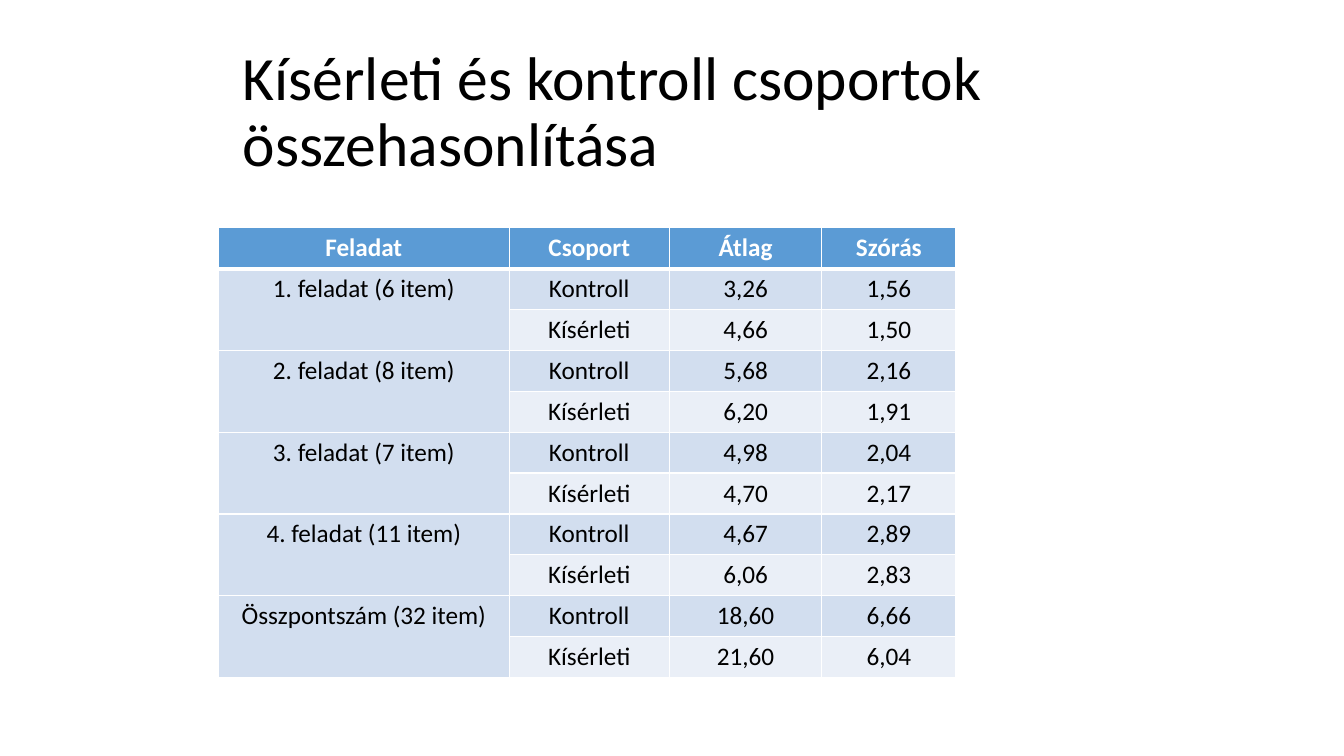
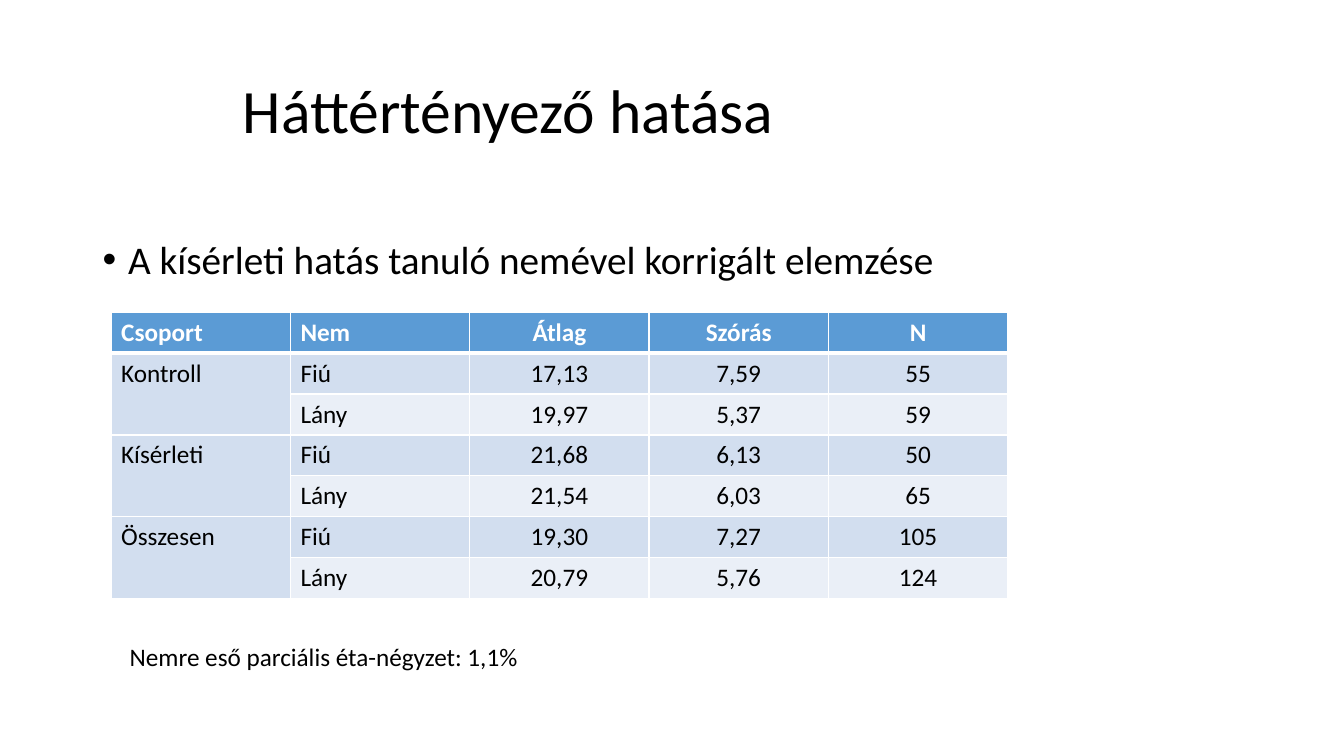
"""Build two slides that compare test results in tables."""
import pptx
import pptx.dml.color
import pptx.enum.text
import pptx.oxml
import pptx.oxml.ns
import pptx.util

Cm = pptx.util.Cm
Pt = pptx.util.Pt
RGB = pptx.dml.color.RGBColor
ALIGN = pptx.enum.text.PP_ALIGN
ANCHOR = pptx.enum.text.MSO_ANCHOR

BLACK = RGB(0x00, 0x00, 0x00)
WHITE = RGB(0xFF, 0xFF, 0xFF)
BLUE = RGB(0x5B, 0x9B, 0xD5)
BANDS = RGB(0xD2, 0xDE, 0xEF), RGB(0xEA, 0xEF, 0xF7)
FONT = "Calibri"
ROW = 1.03
TITLE = 5.87, 1.02, 22.56, 3.68

TASKS = {
    "spot": (5.51, 5.74),
    "cols": (7.32, 4.04, 3.84, 3.38),
    "left": 0,
    "head": ("Feladat", "Csoport", "Átlag", "Szórás"),
    "pair": ("Kontroll", "Kísérleti"),
    "groups": [
        ("1. feladat (6 item)", ("3,26", "1,56"), ("4,66", "1,50")),
        ("2. feladat (8 item)", ("5,68", "2,16"), ("6,20", "1,91")),
        ("3. feladat (7 item)", ("4,98", "2,04"), ("4,70", "2,17")),
        ("4. feladat (11 item)", ("4,67", "2,89"), ("6,06", "2,83")),
        ("Összpontszám (32 item)", ("18,60", "6,66"), ("21,60", "6,04")),
    ],
}
GENDERS = {
    "spot": (2.8, 7.87),
    "cols": (4.52,) * 5,
    "left": 2,
    "head": ("Csoport", "Nem", "Átlag", "Szórás", "N"),
    "pair": ("Fiú", "Lány"),
    "groups": [
        ("Kontroll", ("17,13", "7,59", "55"), ("19,97", "5,37", "59")),
        ("Kísérleti", ("21,68", "6,13", "50"), ("21,54", "6,03", "65")),
        ("Összesen", ("19,30", "7,27", "105"), ("20,79", "5,76", "124")),
    ],
}


def style(para, size, color=BLACK, bold=False):
    font = para.font
    font.name, font.size, font.bold = FONT, Pt(size), bold
    font.color.rgb = color


def add_text(slide, box, text, size, bullet=False):
    frame = slide.shapes.add_textbox(*map(Cm, box)).text_frame
    frame.word_wrap = True
    para = frame.paragraphs[0]
    para.text = text
    if bullet:
        props = para._p.get_or_add_pPr()
        props.set("marL", str(Cm(0.64)))
        props.set("indent", str(-Cm(0.64)))
        for tag, key, value in (("a:buFont", "typeface", "Arial"),
                                ("a:buChar", "char", "•")):
            node = pptx.oxml.parse_xml(
                f'<{tag} {pptx.oxml.ns.nsdecls("a")} {key}="{value}"/>')
            props.append(node)
    style(para, size)
    return frame


def add_slide(deck, title):
    slide = deck.slides.add_slide(deck.slide_layouts[6])
    frame = add_text(slide, TITLE, title, 44)
    frame.vertical_anchor = ANCHOR.MIDDLE
    frame.paragraphs[0].line_spacing = 0.9
    return slide


def add_edges(cell, row):
    props = cell._tc.get_or_add_tcPr()
    widths = {"L": 1, "R": 1, "T": 3 if row == 1 else 1, "B": 1 if row else 3}
    for side, width in widths.items():
        props.append(pptx.oxml.parse_xml(
            f'<a:ln{side} {pptx.oxml.ns.nsdecls("a")} w="{Pt(width)}">'
            f'<a:solidFill><a:srgbClr val="{WHITE}"/></a:solidFill>'
            f'</a:ln{side}>'))


def add_table(slide, data):
    rows = [data["head"]]
    for name, *lines in data["groups"]:
        for label, part, line in zip(data["pair"], (name, ""), lines):
            rows.append((part, label, *line))
    cols = data["cols"]
    box = (*data["spot"], sum(cols), ROW * len(rows))
    table = slide.shapes.add_table(
        len(rows), len(cols), *map(Cm, box)).table
    for col, width in zip(table.columns, cols):
        col.width = Cm(width)
    for r, row in enumerate(rows):
        table.rows[r].height = Cm(ROW)
        for c, text in enumerate(row):
            cell = table.cell(r, c)
            add_edges(cell, r)
            cell.fill.solid()
            band = 0 if c == 0 else (r - 1) % 2
            cell.fill.fore_color.rgb = BANDS[band] if r else BLUE
            para = cell.text_frame.paragraphs[0]
            para.text = text
            para.alignment = ALIGN.LEFT if c < data["left"] else ALIGN.CENTER
            style(para, 18, BLACK if r else WHITE, r == 0)
    for r in range(1, len(rows), 2):
        table.cell(r, 0).merge(table.cell(r + 1, 0))


def main():
    deck = pptx.Presentation()
    deck.slide_width, deck.slide_height = Cm(33.87), Cm(19.05)

    slide = add_slide(deck, "Kísérleti és kontroll csoportok összehasonlítása")
    add_table(slide, TASKS)

    slide = add_slide(deck, "Háttértényező hatása")
    body = add_text(slide, (2.34, 5.94, 29.21, 11.23),
                    "A kísérleti hatás tanuló nemével korrigált elemzése",
                    28, bullet=True)
    body.paragraphs[0].line_spacing = 0.9
    add_table(slide, GENDERS)
    add_text(slide, (3.02, 16.03, 15.27, 1.02),
             "Nemre eső parciális éta-négyzet: 1,1%", 18)

    deck.save("out.pptx")


if __name__ == "__main__":
    main()
